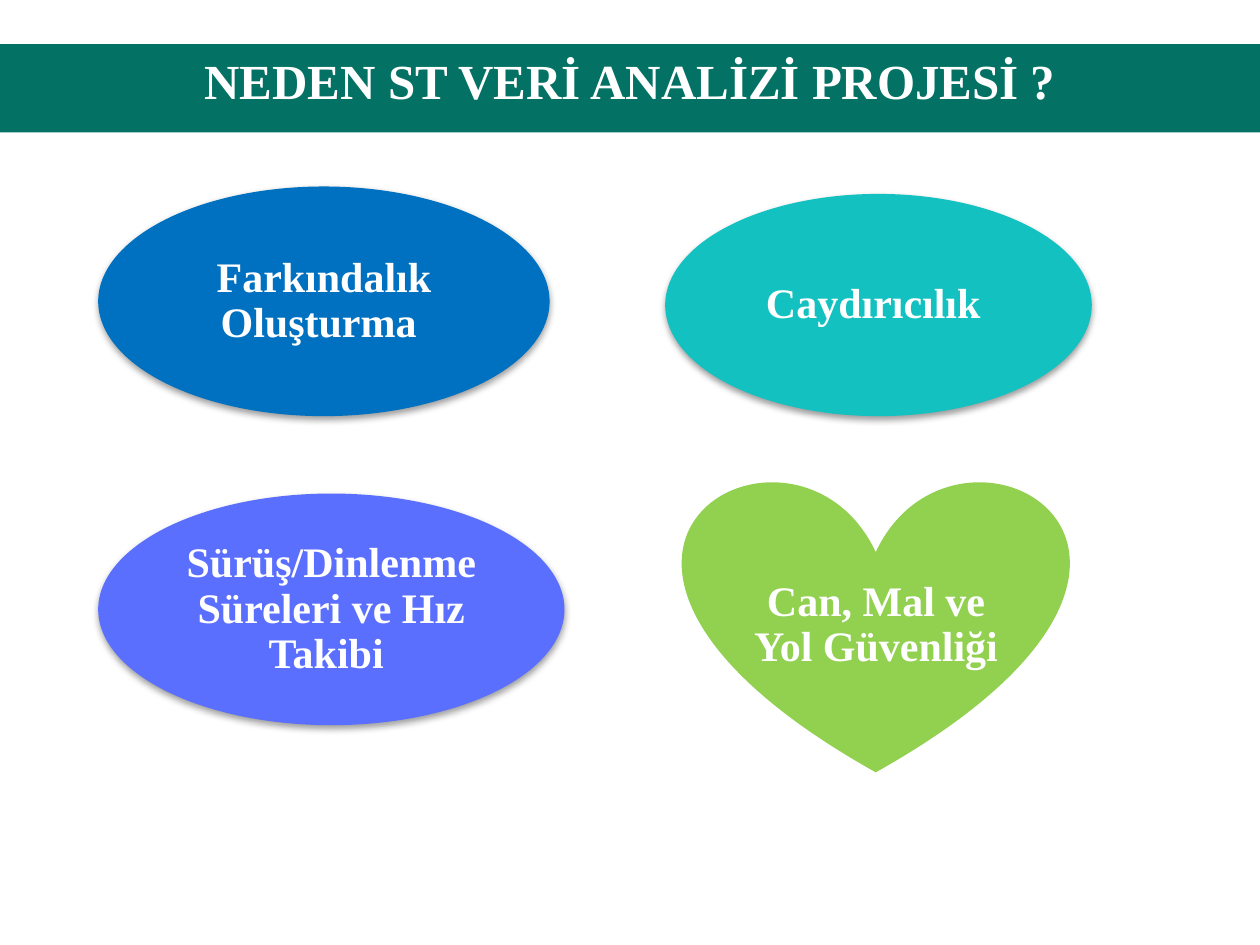
from lxml import etree
from pptx import Presentation
from pptx import util as u
from pptx.dml.color import RGBColor
from pptx.enum import shapes, text
from pptx.oxml import ns

WHITE = RGBColor(0xFF, 0xFF, 0xFF)
GREEN = RGBColor(0x03, 0x71, 0x64)
BLUE = RGBColor(0x00, 0x70, 0xC0)
VIOLET = RGBColor(0x5B, 0x6F, 0xFF)
TEAL = RGBColor(0x13, 0xC1, 0xC1)
LIME = RGBColor(0x92, 0xD0, 0x50)

# Label area inside a shape, as shares: left, top, width, height
OVAL_AREA = (0.146, 0.146, 0.708, 0.708)
HEART_AREA = (0.167, 0.292, 0.667, 0.416)


def write(frame, words, size=24, spacing=None, anchor=text.MSO_ANCHOR.MIDDLE, margin=None):
    """Put one centred bold white paragraph into a text frame."""
    frame.word_wrap = True
    frame.vertical_anchor = anchor
    if margin is not None:
        frame.margin_left = frame.margin_right = u.Cm(margin)
        frame.margin_top = frame.margin_bottom = u.Cm(margin)
    para = frame.paragraphs[0]
    para.alignment = text.PP_ALIGN.CENTER
    para.line_spacing = spacing
    span = para.add_run()
    span.text = words
    span.font.name = "Times New Roman"
    span.font.size = u.Pt(size)
    span.font.bold = True
    span.font.color.rgb = WHITE


class Page:
    def __init__(self, deck):
        self.slide = deck.slides.add_slide(deck.slide_layouts[6])

    def shape(self, parent, kind, area, color):
        shape = parent.add_shape(kind, *(u.Cm(length) for length in area))
        shape.shadow.inherit = False
        shape.fill.solid()
        shape.fill.fore_color.rgb = color
        shape.line.fill.background()
        return shape

    def drop_shadow(self, shape):
        effects = shape._element.spPr.find(ns.qn("a:effectLst"))
        shadow = etree.SubElement(effects, ns.qn("a:outerShdw"), blurRad=str(u.Pt(4)),
                                  dist=str(u.Pt(2)), dir="5400000", rotWithShape="0")
        black = etree.SubElement(shadow, ns.qn("a:srgbClr"), val="000000")
        etree.SubElement(black, ns.qn("a:alpha"), val="38000")

    def banner(self, words, area, color):
        band = self.shape(self.slide.shapes, shapes.MSO_SHAPE.RECTANGLE, area, color)
        write(band.text_frame, words, size=28, anchor=text.MSO_ANCHOR.TOP)

    def label(self, parent, words, area, inner, margin):
        left, top, width, height = area
        x, y, w, h = inner
        box = parent.add_textbox(u.Cm(left + x * width), u.Cm(top + y * height),
                                 u.Cm(w * width), u.Cm(h * height))
        write(box.text_frame, words, spacing=0.9, margin=margin)

    def oval(self, words, area, color):
        group = self.slide.shapes.add_group_shape().shapes
        self.drop_shadow(self.shape(group, shapes.MSO_SHAPE.OVAL, area, color))
        self.label(group, words, area, OVAL_AREA, 0.03)

    def heart(self, words, area, color):
        group = self.slide.shapes.add_group_shape().shapes
        self.shape(group, shapes.MSO_SHAPE.HEART, area, color)
        self.label(group, words, area, HEART_AREA, 0.05)


def main():
    deck = Presentation()
    deck.slide_width, deck.slide_height = u.Cm(25.4), u.Cm(19.05)
    page = Page(deck)

    # Title band
    page.banner("NEDEN ST VERİ ANALİZİ PROJESİ ?", (0, 0.89, 25.4, 1.78), GREEN)

    # Reasons for the project
    page.oval("Farkındalık Oluşturma ", (1.98, 3.76, 9.1, 4.63), BLUE)
    page.oval("Sürüş/Dinlenme Süreleri ve Hız Takibi ", (1.98, 9.95, 9.4, 4.67), VIOLET)
    page.oval("Caydırıcılık ", (13.41, 3.91, 8.6, 4.48), TEAL)
    page.heart("Can, Mal ve Yol Güvenliği ", (13.77, 9.65, 7.77, 5.92), LIME)

    deck.save("out.pptx")


if __name__ == "__main__":
    main()
